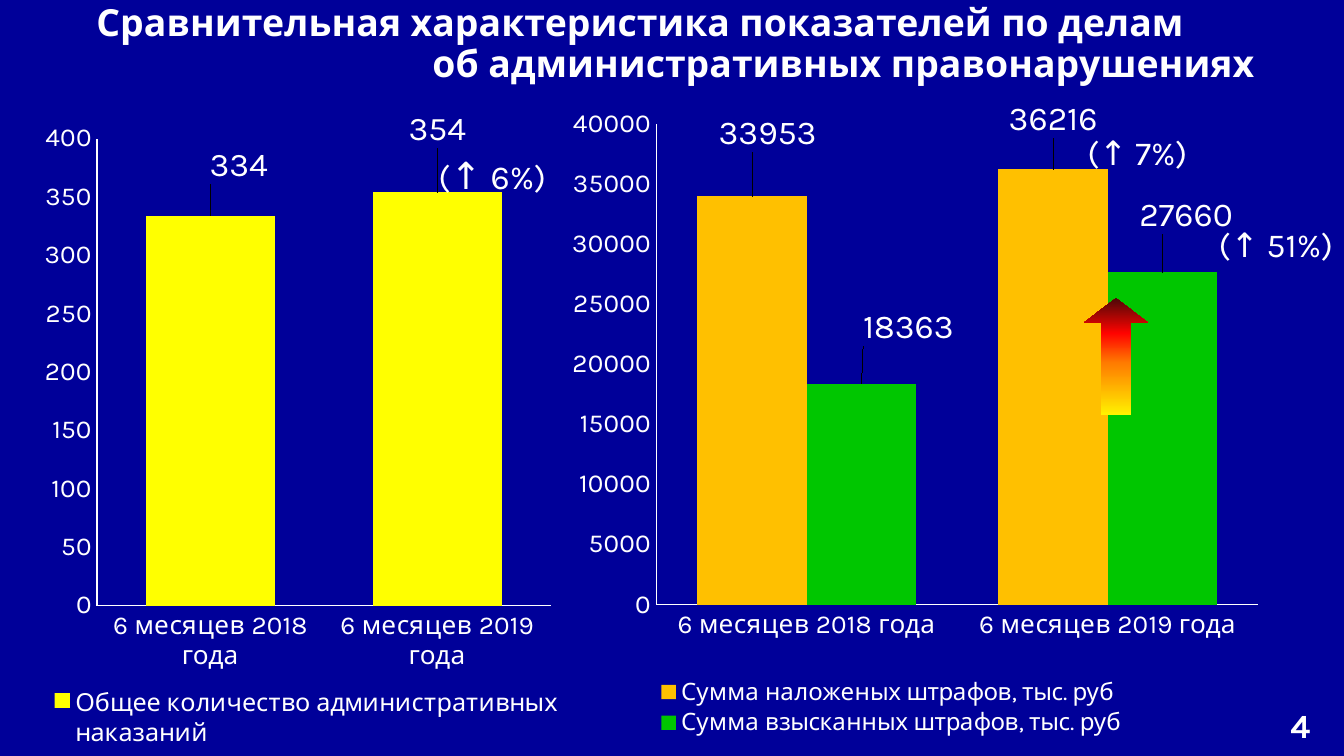
from lxml import etree
from pptx import Presentation
from pptx.chart.data import CategoryChartData
from pptx.dml.color import RGBColor
from pptx.enum import chart as charts, shapes, text
from pptx.oxml import ns
from pptx.util import Pt

NAVY = RGBColor(0x00, 0x00, 0x99)
WHITE = RGBColor(0xFF, 0xFF, 0xFF)
YELLOW = RGBColor(0xFF, 0xFF, 0x00)
AMBER = RGBColor(0xFF, 0xC0, 0x00)
GREEN = RGBColor(0x00, 0xC6, 0x00)
FLAME = [
    (0, RGBColor(0xFF, 0xF2, 0x00)),
    (45, RGBColor(0xFF, 0x7A, 0x00)),
    (70, RGBColor(0xFF, 0x03, 0x00)),
    (100, RGBColor(0x4D, 0x08, 0x08)),
]
PERIODS = ["6 месяцев 2018 года", "6 месяцев 2019 года"]


def set_font(font, size, bold=False):
    for name, value in {"name": "Karla", "size": Pt(size), "bold": bold}.items():
        setattr(font, name, value)
    font.color.rgb = WHITE


def points(box):
    return [Pt(length) for length in box]


def add_title(page, box, lines):
    frame = page.shapes.add_textbox(*points(box)).text_frame
    frame.word_wrap = True
    frame.vertical_anchor = text.MSO_ANCHOR.MIDDLE
    for number, (line, indent) in enumerate(lines):
        para = frame.add_paragraph() if number else frame.paragraphs[0]
        para._p.get_or_add_pPr().set("marL", str(Pt(indent)))
        para.line_spacing = 0.9
        span = para.add_run()
        span.text = line
        set_font(span.font, 20, True)


def make_layout(inner=False, **fractions):
    layout = etree.Element(ns.qn("c:layout"))
    manual = etree.SubElement(layout, ns.qn("c:manualLayout"))
    values = {}
    if inner:
        values["layoutTarget"] = "inner"
    if "w" in fractions:
        values.update(xMode="edge", yMode="edge")
    values.update(fractions)
    for name, value in values.items():
        etree.SubElement(manual, ns.qn(f"c:{name}")).set("val", str(value))
    return layout


def place(parent, layout, index):
    for previous in parent.findall(ns.qn("c:layout")):
        parent.remove(previous)
    parent.insert(index, layout)


def add_columns(page, box, series_list, top, step, size, plot_box, legend_box):
    data = CategoryChartData()
    data.categories = PERIODS
    for name, values, _, _ in series_list:
        data.add_series(name, values)
    chart = page.shapes.add_chart(
        charts.XL_CHART_TYPE.COLUMN_CLUSTERED, *points(box), data
    ).chart
    chart.has_title = False
    set_font(chart.font, size)

    plot = chart.plots[0]
    for name, value in {"gap_width": 75, "overlap": 0, "vary_by_categories": False}.items():
        setattr(plot, name, value)
    place(chart._chartSpace.chart.plotArea, make_layout(True, **plot_box), 0)

    for axis in (chart.category_axis, chart.value_axis):
        axis.major_tick_mark = charts.XL_TICK_MARK.NONE
        axis.has_major_gridlines = False
        axis.format.line.color.rgb = WHITE
        axis.format.line.width = Pt(0.75)
        set_font(axis.tick_labels.font, 14)
    scale = {"minimum_scale": 0, "maximum_scale": top, "major_unit": step}
    for name, value in scale.items():
        setattr(chart.value_axis, name, value)

    for series, (_, _, color, shifts) in zip(plot.series, series_list):
        series.format.fill.solid()
        series.format.fill.fore_color.rgb = color
        for number in range(len(shifts)):
            label = series.points[number].data_label
            label.position = charts.XL_LABEL_POSITION.OUTSIDE_END
            set_font(label.font, 18)
        labels = series._element.findall(".//" + ns.qn("c:dLbl"))
        for label, (across, down) in zip(labels, shifts):
            place(label, make_layout(x=across, y=down), 1)

    chart.has_legend = True
    chart.legend.position = charts.XL_LEGEND_POSITION.BOTTOM
    chart.legend.include_in_layout = False
    set_font(chart.legend.font, size)
    place(chart.legend._element, make_layout(**legend_box), 1)


def add_note(page, box, spans, bold=False):
    note = page.shapes.add_shape(shapes.MSO_SHAPE.OVAL, *points(box))
    note.shadow.inherit = False
    note.fill.background()
    note.line.fill.background()
    frame = note.text_frame
    frame.word_wrap = False
    frame.vertical_anchor = text.MSO_ANCHOR.MIDDLE
    para = frame.paragraphs[0]
    para.alignment = text.PP_ALIGN.CENTER
    for words, size in spans:
        span = para.add_run()
        span.text = words
        set_font(span.font, size, bold)


def add_growth_arrow(page, box):
    arrow = page.shapes.add_shape(shapes.MSO_SHAPE.RIGHT_ARROW, *points(box))
    arrow.shadow.inherit = False
    arrow.line.fill.background()
    arrow.rotation = 270
    arrow.adjustments[0] = 0.47
    arrow.adjustments[1] = 0.38
    arrow.fill.gradient()
    arrow.fill.gradient_angle = 0
    stops = arrow._element.spPr.find(".//" + ns.qn("a:gsLst"))
    for stop in list(stops):
        stops.remove(stop)
    for percent, color in FLAME:
        stop = etree.SubElement(stops, ns.qn("a:gs"), pos=str(percent * 1000))
        etree.SubElement(stop, ns.qn("a:srgbClr"), val=str(color))


def main():
    deck = Presentation()
    deck.slide_width, deck.slide_height = Pt(720), Pt(405)
    page = deck.slides.add_slide(deck.slide_layouts[6])
    page.background.fill.solid()
    page.background.fill.fore_color.rgb = NAVY

    add_title(page, (-14.4, -3.6, 722, 55.4), [
        ("Сравнительная характеристика показателей по делам", 59),
        ("об административных правонарушениях", 239),
    ])
    add_columns(
        page, (6.5, 59, 303.8, 347.8),
        [("Общее количество административных наказаний", (334, 354), YELLOW,
          [(0.05, -0.04), (0, -0.06)])],
        400, 50, 13.5,
        {"x": 0.15, "y": 0.03, "w": 0.8, "h": 0.73},
        {"x": 0.05, "y": 0.89, "w": 0.94, "h": 0.1},
    )
    add_columns(
        page, (267.8, 53.3, 419, 346.3),
        [("Сумма наложеных штрафов, тыс. руб", (33953, 36216), AMBER,
          [(0.02, -0.06), (0, -0.04)]),
         ("Сумма взысканных штрафов, тыс. руб", (18363, 27660), GREEN,
          [(0.06, -0.05), (0.03, -0.05)])],
        40000, 5000, 12.9,
        {"x": 0.2, "y": 0.03, "w": 0.77, "h": 0.75},
        {"x": 0.19, "y": 0.89, "w": 0.62, "h": 0.1},
    )
    add_note(page, (676.8, 373.7, 39.6, 29.5), [("4", 18)], True)
    add_note(page, (195.8, 63.4, 136, 59.8), [("(", 18), ("↑ ", 20), ("6%)", 18)])
    add_note(page, (541.4, 51.8, 136, 59.8), [("(↑ 7%)", 18)])
    add_note(page, (615.6, 100.8, 136, 59.8), [("(↑ 51%)", 18)])
    add_growth_arrow(page, (566.6, 174.2, 62.6, 33.8))
    deck.save("out.pptx")


if __name__ == "__main__":
    main()
